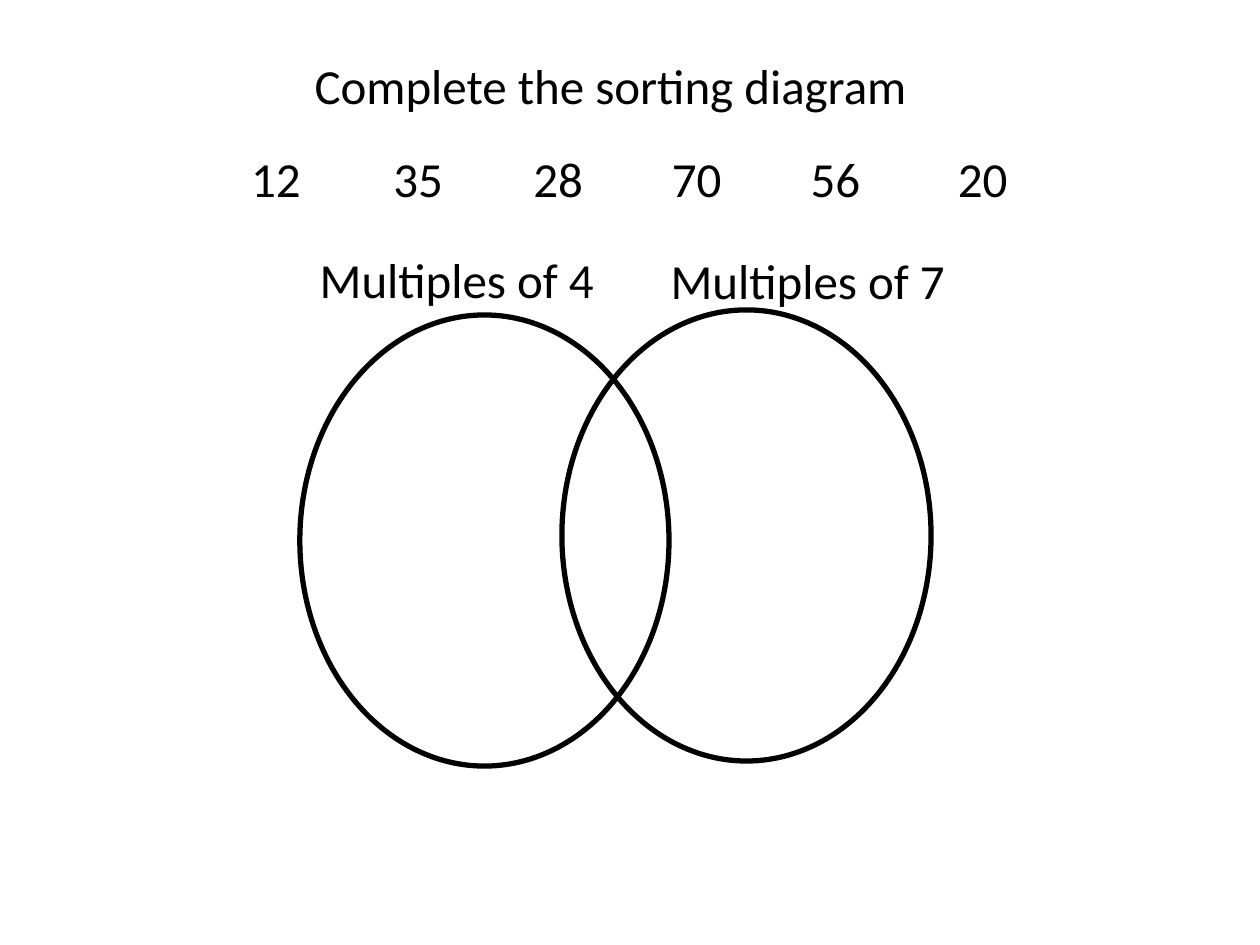
from pptx import Presentation
from pptx.dml.color import RGBColor
from pptx.enum.shapes import MSO_SHAPE
from pptx.enum.text import MSO_ANCHOR, MSO_AUTO_SIZE, PP_ALIGN
from pptx.util import Inches, Pt

COLORS = {"ink": "000000"}
FONT = "Calibri"
TEXT_SIZE = 28
LINE_HEIGHT = 0.57

# Number row: each number with the centre of its column
NUMBERS = {"12": 2.19, "35": 3.32, "28": 4.43, "70": 5.53, "56": 6.63, "20": 7.8}
NUMBER_TOP = 1.13
NUMBER_WIDTH = 0.8

# Sorting sets: label, label place (left, top, width), ellipse corner
SETS = [
    ("Multiples of 4", (2.38, 1.93, 2.49), (2.38, 2.5)),
    ("Multiples of 7", (5.15, 1.94, 2.52), (4.46, 2.46)),
]
SET_SIZE = (2.93, 3.58)


def write_line(box, text):
    frame = box.text_frame
    frame.text = text
    frame.word_wrap = True
    frame.auto_size = MSO_AUTO_SIZE.SHAPE_TO_FIT_TEXT
    frame.vertical_anchor = MSO_ANCHOR.TOP
    paragraph = frame.paragraphs[0]
    paragraph.alignment = PP_ALIGN.CENTER
    font = paragraph.runs[0].font
    font.name = FONT
    font.size = Pt(TEXT_SIZE)
    font.color.rgb = RGBColor.from_string(COLORS["ink"])


def place_title(slide, text):
    title = slide.shapes.title
    title.left, title.top = Inches(1.25), Inches(0.39)
    title.width, title.height = Inches(7.19), Inches(LINE_HEIGHT)
    write_line(title, text)


def add_label(slide, text, left, top, width):
    label = slide.shapes.add_textbox(
        Inches(left), Inches(top), Inches(width), Inches(LINE_HEIGHT))
    write_line(label, text)


def add_set_outline(slide, left, top):
    width, height = SET_SIZE
    outline = slide.shapes.add_shape(
        MSO_SHAPE.OVAL, Inches(left), Inches(top), Inches(width), Inches(height))
    outline.shadow.inherit = False
    outline.fill.background()
    outline.line.color.rgb = RGBColor.from_string(COLORS["ink"])
    outline.line.width = Pt(3)


def main():
    presentation = Presentation()
    presentation.slide_width = Inches(10)
    presentation.slide_height = Inches(7.5)
    slide = presentation.slides.add_slide(presentation.slide_layouts[5])

    place_title(slide, "Complete the sorting diagram")

    # Overlapping sets with their labels
    for _, _, corner in SETS:
        add_set_outline(slide, *corner)
    for label, place, _ in SETS:
        add_label(slide, label, *place)

    # Numbers to sort
    for number, centre in NUMBERS.items():
        add_label(slide, number, centre - NUMBER_WIDTH / 2, NUMBER_TOP, NUMBER_WIDTH)

    presentation.save("out.pptx")


if __name__ == "__main__":
    main()
